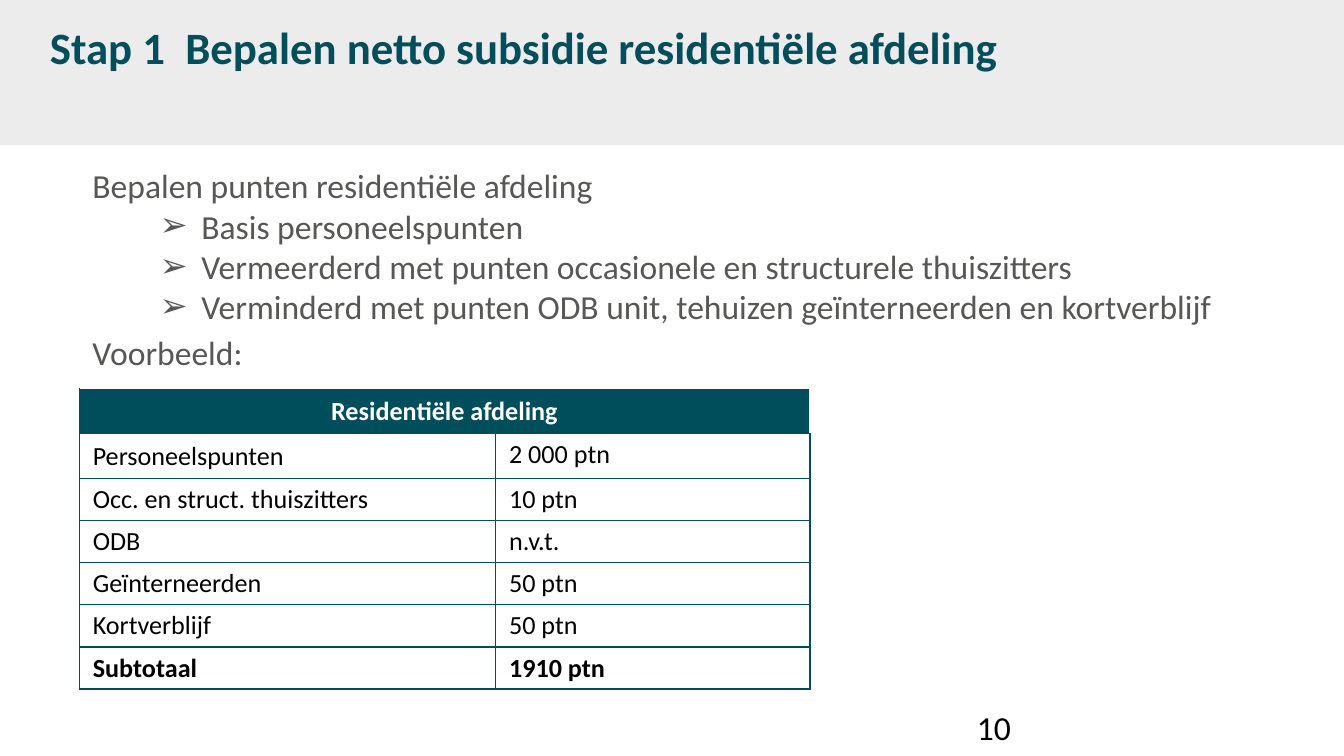
from dataclasses import dataclass
from typing import Optional

from lxml.etree import SubElement as Sub
from pptx import Presentation as Deck
from pptx.dml.color import RGBColor as RGB
from pptx.enum.shapes import MSO_SHAPE as Kind
from pptx.enum.text import MSO_ANCHOR as Anchor, MSO_AUTO_SIZE as Auto, PP_ALIGN as Align
from pptx.oxml import parse_xml
from pptx.oxml.ns import nsdecls, qn
from pptx.util import Inches, Pt

TEAL = RGB(0x00, 0x4D, 0x5C)
GREY = RGB(0x57, 0x57, 0x56)
PALE = RGB(0xEC, 0xEC, 0xEC)
WHITE = RGB(0xFF, 0xFF, 0xFF)
BLACK = RGB(0, 0, 0)
FONT = "Calibri"
WIDE = Inches(10)
HIGH = WIDE * 9 // 16


@dataclass(frozen=True)
class Area:
    """A place on the slide, in percent of its width and height."""
    x: float
    y: float
    w: float
    h: float

    def box(self) -> tuple[int, ...]:
        pairs = ((self.x, WIDE), (self.y, HIGH), (self.w, WIDE), (self.h, HIGH))
        return tuple(round(part * full / 100) for part, full in pairs)


@dataclass(frozen=True)
class Style:
    size: int
    color: RGB
    bold: bool = False


@dataclass(frozen=True)
class Line:
    text: str
    space: Optional[float] = None
    mark: str = ""


@dataclass(frozen=True)
class Block:
    area: Area
    style: Style
    lines: tuple[Line, ...]
    frame: dict


FREE = {"word_wrap": False, "auto_size": Auto.SHAPE_TO_FIT_TEXT}
FIXED = {"word_wrap": True}
TITLE = Style(24, TEAL, True)
BODY = Style(18, GREY)
HEAD = Style(14, WHITE, True)
CELL = Style(14, BLACK)
TOTAL = Style(14, BLACK, True)

BAND = Area(0, 0, 100, 19.2)
GRID = Area(5.9, 51.4, 54.35, 38.6)
SHARES = (0.57, 0.43)

BLOCKS = (
    Block(Area(5.9, 18.3, 86.4, 31.47), BODY, (
        Line("Bepalen punten residentiële afdeling", space=1.5),
        Line("Basis personeelspunten", mark="➢"),
        Line("Vermeerderd met punten occasionele en structurele thuiszitters", mark="➢"),
        Line("Verminderd met punten ODB unit, tehuizen geïnterneerden en kortverblijf", mark="➢"),
    ), FREE),
    Block(Area(2.73, 0, 81.1, 12.27), TITLE,
          (Line("Stap 1  Bepalen netto subsidie residentiële afdeling"),),
          FIXED | {"vertical_anchor": Anchor.MIDDLE}),
    Block(Area(71.7, 92.6, 23.3, 5.33), Style(18, BLACK), (Line("10"),), FIXED),
    Block(Area(5.9, 43, 13.3, 7.1), BODY, (Line("Voorbeeld:"),), FREE),
)
TITLE_ROW = "Residentiële afdeling"
ROWS = (
    ("Personeelspunten", "2 000 ptn"),
    ("Occ. en struct. thuiszitters", "10 ptn"),
    ("ODB", "n.v.t."),
    ("Geïnterneerden", "50 ptn"),
    ("Kortverblijf", "50 ptn"),
    ("Subtotaal", "1910 ptn"),
)


def assign(item, values: dict) -> None:
    for name, value in values.items():
        setattr(item, name, value)


def write(para, text: str, style: Style) -> None:
    run = para.add_run()
    run.text = text
    assign(run.font, {"name": FONT, "size": Pt(style.size), "bold": style.bold})
    run.font.color.rgb = style.color


def indent(para, mark: str) -> None:
    """Hang the text of a paragraph behind a bullet mark."""
    props = para._p.get_or_add_pPr()
    props.set("marL", str(Inches(0.81)))
    props.set("indent", str(Inches(-0.31)))
    Sub(props, qn("a:buFont")).set("typeface", FONT)
    Sub(props, qn("a:buChar")).set("char", mark)


def draw_block(slide, block: Block) -> None:
    frame = slide.shapes.add_textbox(*block.area.box()).text_frame
    assign(frame, block.frame)
    for i, line in enumerate(block.lines):
        para = frame.add_paragraph() if i else frame.paragraphs[0]
        if line.space:
            para.line_spacing = line.space
        if line.mark:
            para.level = 1
            indent(para, line.mark)
        write(para, line.text, block.style)


def draw_band(slide) -> None:
    band = slide.shapes.add_shape(Kind.RECTANGLE, *BAND.box())
    band.shadow.inherit = False
    band.fill.solid()
    band.fill.fore_color.rgb = PALE
    band.line.fill.background()


def edge(cell, **special: RGB) -> None:
    """Give a cell teal borders, but for the sides (L, R, T, B) named."""
    props = cell._tc.get_or_add_tcPr()
    for i, side in enumerate("LRTB"):
        props.insert(i, parse_xml(
            f'<a:ln{side} {nsdecls("a")} w="{Pt(1)}"><a:solidFill>'
            f'<a:srgbClr val="{special.get(side, TEAL)}"/></a:solidFill></a:ln{side}>'))


def draw_table(slide) -> None:
    count = len(ROWS) + 1
    table = slide.shapes.add_table(count, len(SHARES), *GRID.box()).table
    assign(table, {"first_row": False, "horz_banding": False})
    for col, share in zip(table.columns, SHARES):
        col.width = round(GRID.box()[2] * share)
    for row in table.rows:
        row.height = GRID.box()[3] // count

    for cell in table.rows[0].cells:
        cell.fill.solid()
        cell.fill.fore_color.rgb = TEAL
        edge(cell, T=WHITE, R=WHITE)
    head = table.cell(0, 0)
    head.merge(table.cell(0, 1))
    para = head.text_frame.paragraphs[0]
    para.alignment = Align.CENTER
    write(para, TITLE_ROW, HEAD)

    slim = {"margin_top": Inches(0.04), "margin_bottom": Inches(0.04)}
    for r, texts in enumerate(ROWS, 1):
        for c, text in enumerate(texts):
            cell = table.cell(r, c)
            cell.fill.background()
            edge(cell)
            if (r, c) != (1, 0):
                assign(cell, slim)
            write(cell.text_frame.paragraphs[0], text, TOTAL if r == len(ROWS) else CELL)


def main() -> None:
    deck = Deck()
    assign(deck, {"slide_width": WIDE, "slide_height": HIGH})
    slide = deck.slides.add_slide(deck.slide_layouts[6])
    draw_band(slide)
    for block in BLOCKS:
        draw_block(slide, block)
    draw_table(slide)
    deck.save("out.pptx")


if __name__ == "__main__":
    main()
